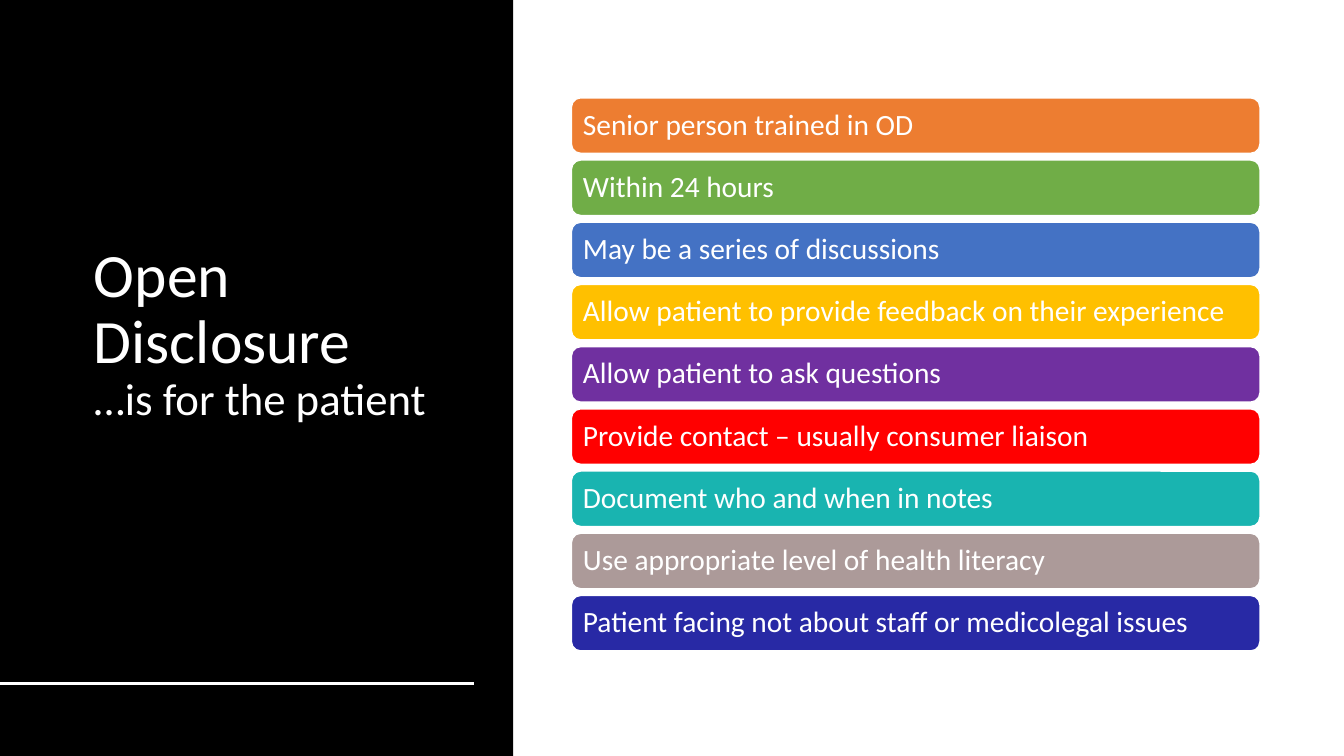
from pptx import Presentation
from pptx.dml.color import RGBColor
from pptx.enum.shapes import MSO_CONNECTOR, MSO_SHAPE
from pptx.enum.text import MSO_ANCHOR, PP_ALIGN
from pptx.oxml.ns import qn
from pptx.util import Pt
from lxml.etree import SubElement

BLACK = "000000"
WHITE = "FFFFFF"

STEPS = [
    ("Senior person trained in OD", "ED7D31"),
    ("Within 24 hours", "70AD47"),
    ("May be a series of discussions", "4472C4"),
    ("Allow patient to provide feedback on their experience", "FFC000"),
    ("Allow patient to ask questions", "7030A0"),
    ("Provide contact – usually consumer liaison", "FF0000"),
    ("Document who and when in notes", "19B4B0"),
    ("Use appropriate level of health literacy", "AC9A99"),
    ("Patient facing not about staff or medicolegal issues", "2829A5"),
]
STEP_TOP = 69.9
STEP_PITCH = 44.43


def color(hex_string):
    return RGBColor.from_string(hex_string)


def add_span(para, text, size, font="Calibri", ink=WHITE):
    span = para.add_run()
    span.text = text
    span.font.name = font
    span.font.size = Pt(size)
    span.font.color.rgb = color(ink)


class SlideBuilder:
    """Holds the text style and the page that is being filled."""

    def __init__(self, page, font="Calibri", ink=WHITE):
        self.page = page
        self.font = font
        self.ink = ink

    def format_frame(self, shape, inset_x, inset_y):
        """Set up the text frame and return its first paragraph."""
        frame = shape.text_frame
        frame.word_wrap = True
        frame.vertical_anchor = MSO_ANCHOR.MIDDLE
        frame.margin_left = frame.margin_right = Pt(inset_x)
        frame.margin_top = frame.margin_bottom = Pt(inset_y)
        para = frame.paragraphs[0]
        para.alignment = PP_ALIGN.LEFT
        para.line_spacing = 0.9
        return para

    def box(self, kind, left, top, width, height, fill, outline=None):
        box = self.page.shapes.add_shape(kind, Pt(left), Pt(top), Pt(width), Pt(height))
        box.shadow.inherit = False
        box.fill.solid()
        box.fill.fore_color.rgb = color(fill)
        if outline:
            box.line.color.rgb = color(outline)
            box.line.width = Pt(1)
        else:
            box.line.fill.background()
        return box

    def step(self, text, fill, top):
        bar = self.box(MSO_SHAPE.ROUNDED_RECTANGLE, 408.2, top, 491.8, 39.6, fill, WHITE)
        para = self.format_frame(bar, 6.3, 0)
        add_span(para, text, 21, self.font, self.ink)

    def title(self, heading, subheading, left, top, width, height):
        box = self.page.shapes.add_textbox(Pt(left), Pt(top), Pt(width), Pt(height))
        para = self.format_frame(box, 7.2, 3.6)
        add_span(para, heading, 44, self.font, self.ink)
        para.add_line_break()
        add_span(para, subheading, 32, self.font, self.ink)

    def rule(self, left, right, y, ink, width):
        """Draw a horizontal line."""
        line = self.page.shapes.add_connector(
            MSO_CONNECTOR.STRAIGHT, Pt(left), Pt(y), Pt(right), Pt(y))
        line.line.color.rgb = color(ink)
        line.line.width = Pt(width)
        SubElement(line._element.spPr, qn("a:effectLst"))


def main():
    deck = Presentation()
    deck.slide_width = Pt(960)
    deck.slide_height = Pt(540)
    builder = SlideBuilder(deck.slides.add_slide(deck.slide_layouts[6]))

    builder.box(MSO_SHAPE.RECTANGLE, 0, 0, 366.5, 540, BLACK)
    builder.title("Open Disclosure", "…is for the patient", 60, 44, 281, 390)
    builder.rule(0, 338.4, 488.2, WHITE, 2)
    for index, (text, fill) in enumerate(STEPS):
        builder.step(text, fill, STEP_TOP + index * STEP_PITCH)

    deck.save("out.pptx")


if __name__ == "__main__":
    main()
